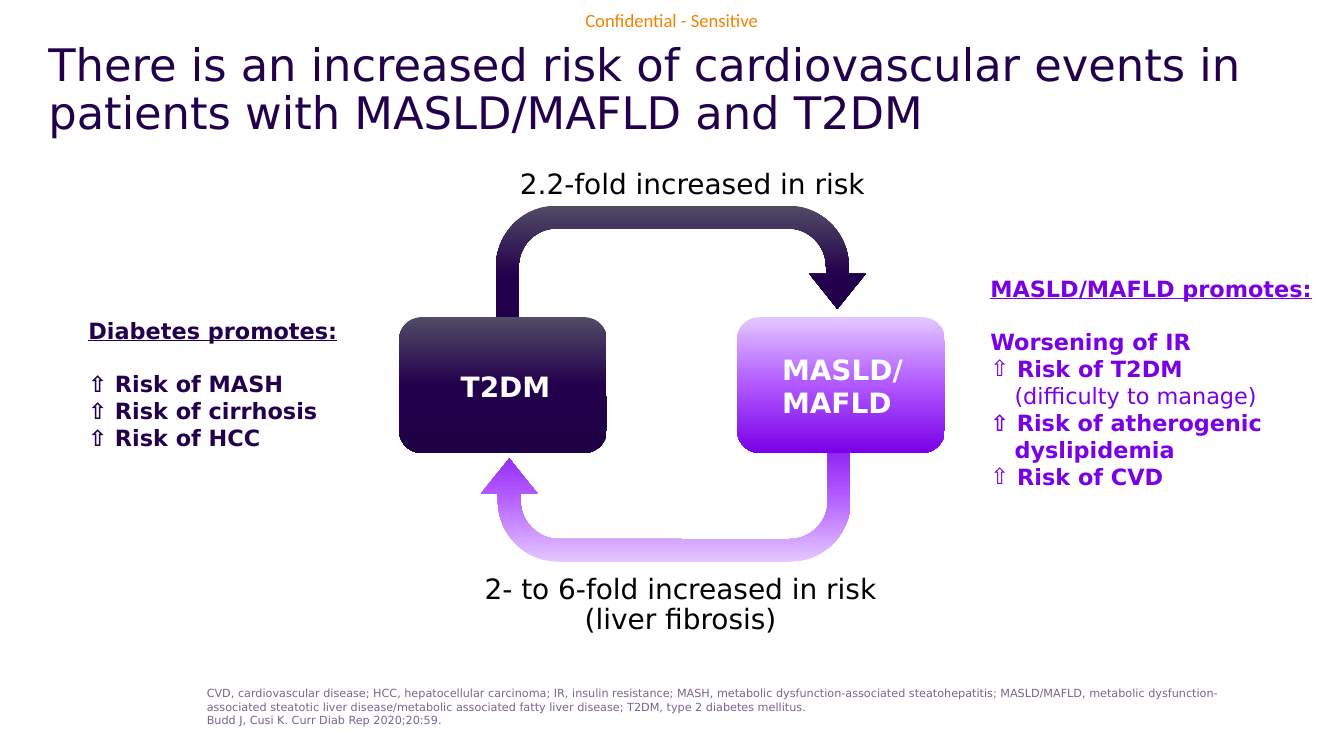
"""Build the slide on cardiovascular risk in MASLD/MAFLD and T2DM."""
from lxml import etree
from pptx import Presentation
from pptx.dml.color import RGBColor
from pptx.enum.shapes import MSO_SHAPE
from pptx.enum.text import MSO_ANCHOR, PP_ALIGN
from pptx.oxml import parse_xml
from pptx.oxml.ns import nsdecls, qn
from pptx.util import Inches, Pt

UTURN, ROUND = MSO_SHAPE.U_TURN_ARROW, MSO_SHAPE.ROUNDED_RECTANGLE
TOP, LEFT, CENTER = MSO_ANCHOR.TOP, PP_ALIGN.LEFT, PP_ALIGN.CENTER
DARK = RGBColor(0x23, 0x00, 0x4C)
VIOLET = RGBColor(0x7A, 0x00, 0xE6)
ORANGE = RGBColor(0xF0, 0x84, 0x00)
MUTED = RGBColor(0x7A, 0x64, 0x90)
WHITE = RGBColor(0xFF, 0xFF, 0xFF)
BLACK = RGBColor(0x00, 0x00, 0x00)
DARK_FADE = (RGBColor(0x50, 0x4B, 0x66), DARK, RGBColor(0x1F, 0x00, 0x44))
VIOLET_FADE = (RGBColor(0xE5, 0xC7, 0xFF), RGBColor(0xB0, 0x57, 0xFF), VIOLET)
FONT = "DejaVu Sans"
WIDE = Inches(10)
HIGH = WIDE * 9 // 16
BEND = (0.163, 0.201, 0.25, 0.438, 0.739)
HANG = 0.2

TITLE = ("There is an increased risk of cardiovascular events in "
         "patients with MASLD/MAFLD and T2DM")
NOTE = ("CVD, cardiovascular disease; HCC, hepatocellular carcinoma; IR, insulin "
        "resistance; MASH, metabolic dysfunction-associated steatohepatitis; "
        "MASLD/MAFLD, metabolic dysfunction-associated steatotic liver disease/metabolic "
        "associated fatty liver disease; T2DM, type 2 diabetes mellitus.\v"
        "Budd J, Cusi K. Curr Diab Rep 2020;20:59.")

# Boxes are left, top, width, height in percent of the slide.
SHAPES = [
    (UTURN, (36.9, 27.2, 27.5, 18.49), DARK_FADE, 0),
    (ROUND, (29.7, 41.96, 15.45, 17.96), DARK_FADE, 0),
    (UTURN, (35.8, 55.82, 27.5, 18.49), VIOLET_FADE, 180),
    (ROUND, (54.85, 41.96, 15.45, 17.96), VIOLET_FADE, 0),
]
LABELS = [
    ("T2DM", (33.3, 48, 8.7, 6.22), 15, WHITE, True, False, LEFT, 1),
    ("MASLD/MAFLD", (57.2, 45.73, 12.1, 10.84), 15, WHITE, True, True, LEFT, 1),
    ("2.2-fold increased in risk", (37.7, 21.16, 28.3, 6.22), 15, BLACK, False, False, LEFT, 1),
    ("2- to 6-fold increased in risk\n(liver fibrosis)", (34.6, 75.2, 32.1, 9.96),
     15, BLACK, False, False, CENTER, 0.9),
    (NOTE, (14.4, 89.96, 80.2, 7.11), 6, MUTED, False, True, LEFT, 1),
]
LISTS = [
    ((5.6, 41.07, 20.6, 19.73), DARK, "Diabetes promotes:", [
        ("⇧ Risk of MASH", "plain"),
        ("⇧ Risk of cirrhosis", "plain"),
        ("⇧ Risk of HCC", "plain")]),
    ((72.7, 35.56, 26.5, 34.13), VIOLET, "MASLD/MAFLD promotes:", [
        ("Worsening of IR", "plain"),
        ("Risk of T2DM", "bullet"),
        ("(difficulty to manage)", "aside"),
        ("⇧ Risk of atherogenic", "plain"),
        ("dyslipidemia", "indent"),
        ("Risk of CVD", "bullet")]),
]


def place(box):
    """Turn percentages of the slide into lengths."""
    return [int(part * side / 100) for part, side in zip(box, (WIDE, HIGH) * 2)]


def style(para, size, color, bold=False, face=FONT):
    """Format every run of a paragraph."""
    for run in para.runs:
        font = run.font
        font.name, font.size, font.bold = face, Pt(size), bold
        font.color.rgb = color


def fade(shape, colors):
    """Fill a shape from top to bottom with three colours."""
    stops = "".join(f'<a:gs pos="{i * 50000}"><a:srgbClr val="{c}"/></a:gs>'
                    for i, c in enumerate(colors))
    shape.fill.background()
    props = shape._element.spPr
    props.replace(props.find(qn("a:noFill")), parse_xml(
        f'<a:gradFill {nsdecls("a")} rotWithShape="1"><a:gsLst>{stops}</a:gsLst>'
        '<a:lin ang="5400000" scaled="0"/></a:gradFill>'))


def indent(para, kind):
    """Set the indent of a list line, and its arrow bullet."""
    props = para._p.get_or_add_pPr()
    props.set("marL", str(Inches(HANG if kind == "bullet" else 0.18)))
    if kind == "bullet":
        props.set("indent", str(-Inches(HANG)))
        etree.SubElement(props, qn("a:buFont")).set("typeface", FONT)
        etree.SubElement(props, qn("a:buChar")).set("char", "⇧")


def add_text(slide, text, box, wrap):
    """Add a text box and return its frame."""
    frame = slide.shapes.add_textbox(*place(box)).text_frame
    frame.text, frame.word_wrap = text, wrap
    return frame


def trim(frame):
    """Remove the margins of a text frame."""
    frame.margin_left = frame.margin_right = frame.margin_top = frame.margin_bottom = 0


def main():
    """Build and save the slide."""
    deck = Presentation()
    deck.slide_width, deck.slide_height = WIDE, HIGH
    slide = deck.slides.add_slide(deck.slide_layouts[5])

    title = slide.shapes.title
    title.left, title.top, title.width, title.height = place((3.6, 5.64, 92.8, 14.04))
    frame = title.text_frame
    frame.text, frame.word_wrap, frame.vertical_anchor = TITLE, True, TOP
    trim(frame)
    head = frame.paragraphs[0]
    head.alignment, head.line_spacing = LEFT, 0.9
    style(head, 24, DARK)

    frame = add_text(slide, "Confidential - Sensitive", (43.55, 1.2, 13.2, 3.02), False)
    trim(frame)
    style(frame.paragraphs[0], 10, ORANGE, face="Calibri")

    for kind, box, colors, turn in SHAPES:
        shape = slide.shapes.add_shape(kind, *place(box))
        shape.shadow.inherit = False
        shape.line.fill.background()
        shape.rotation = turn
        fade(shape, colors)
        if kind == UTURN:
            for i, bend in enumerate(BEND):
                shape.adjustments[i] = bend

    for text, box, size, color, bold, wrap, align, gap in LABELS:
        for para in add_text(slide, text, box, wrap).paragraphs:
            para.alignment, para.line_spacing = align, gap
            style(para, size, color, bold)

    for box, color, name, items in LISTS:
        frame = add_text(slide, name, box, False)
        style(frame.paragraphs[0], 12, color, True)
        frame.paragraphs[0].runs[0].font.underline = True
        for i, (text, kind) in enumerate(items):
            para = frame.add_paragraph()
            para.text = text
            if i == 0:
                para.space_before = Pt(14)
            if kind != "plain":
                indent(para, kind)
            style(para, 12, color, kind != "aside")

    deck.save("out.pptx")


if __name__ == "__main__":
    main()
